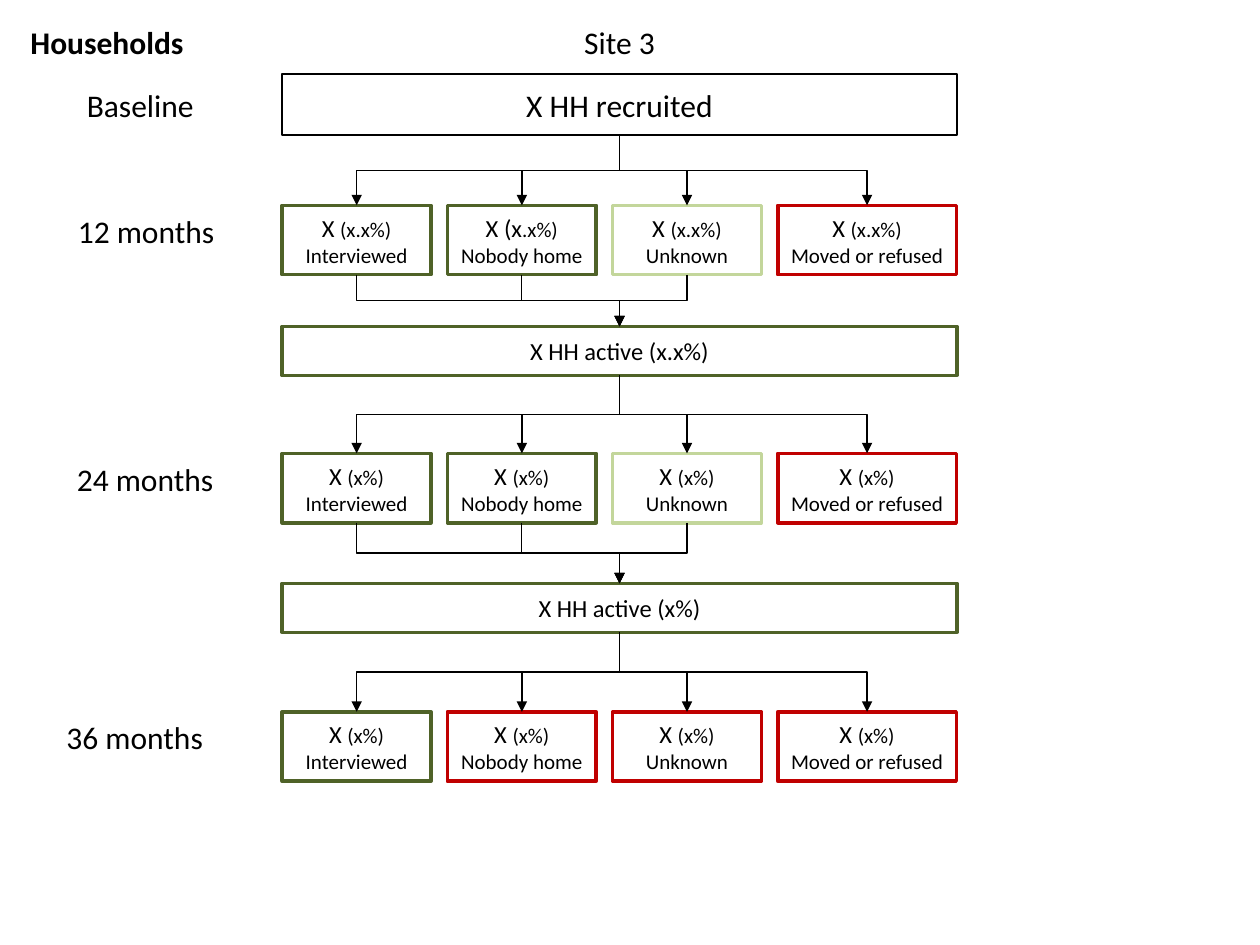
from lxml import etree
from pptx import Presentation
from pptx.dml.color import RGBColor
from pptx.enum.shapes import MSO_CONNECTOR, MSO_SHAPE
from pptx.enum.text import MSO_ANCHOR, PP_ALIGN
from pptx.oxml.ns import qn
from pptx.util import Cm, Pt

COLORS = {"black": "000000", "white": "FFFFFF", "active": "4F6228",
          "unknown": "C3D69B", "lost": "C00000"}
LEFT, FULL_WIDTH = 5.69, 13.6
CENTER = LEFT + FULL_WIDTH / 2
STATUS_STEP, STATUS_HEIGHT = 3.33, 1.4
STATUS_WIDTHS = [3, 3, 3, 3.6]
STATUSES = ["Interviewed", "Nobody home", "Unknown", "Moved or refused"]

prs = Presentation()
prs.slide_width, prs.slide_height = Cm(25.4), Cm(19.05)
slide = prs.slides.add_slide(prs.slide_layouts[5])
shapes = slide.shapes


def write(shape, lines, align=PP_ALIGN.CENTER, anchor=MSO_ANCHOR.MIDDLE, bold=False):
    frame = shape.text_frame
    frame.word_wrap = True
    frame.vertical_anchor = anchor
    frame.text = "\n".join([""] * len(lines))
    for paragraph, pieces in zip(frame.paragraphs, lines):
        paragraph.alignment = align
        for text, size in pieces:
            run = paragraph.add_run()
            run.text = text
            run.font.name, run.font.size, run.font.bold = "Calibri", Pt(size), bold
            run.font.color.rgb = RGBColor.from_string(COLORS["black"])


def add_box(left, top, width, height, color, line_width, lines):
    box = shapes.add_shape(MSO_SHAPE.RECTANGLE, Cm(left), Cm(top), Cm(width), Cm(height))
    box.shadow.inherit = False
    box.fill.solid()
    box.fill.fore_color.rgb = RGBColor.from_string(COLORS["white"])
    box.line.color.rgb = RGBColor.from_string(COLORS[color])
    box.line.width = Pt(line_width)
    box.text_frame.margin_left = box.text_frame.margin_right = 0
    write(box, lines)


households = shapes.title
households.left, households.top, households.width, households.height = (
    Cm(0.36), Cm(0.33), Cm(6.68), Cm(1.02))
write(households, [[("Households", 18)]], PP_ALIGN.LEFT, MSO_ANCHOR.TOP, True)

site = shapes.add_textbox(Cm(LEFT), Cm(0.33), Cm(FULL_WIDTH), Cm(1.02))
write(site, [[("Site 3", 18)]], anchor=MSO_ANCHOR.TOP)

for label, left, top in [("Baseline", 1.5, 1.6), ("12 months", 1.32, 4.14),
                         ("24 months", 1.3, 9.14), ("36 months", 1.09, 14.35)]:
    visit = shapes.add_textbox(Cm(left), Cm(top), Cm(3.6), Cm(1.02))
    write(visit, [[(label, 18)]], PP_ALIGN.LEFT, MSO_ANCHOR.TOP)

totals = [
    ("X HH recruited", 1.5, 1.23, "black", 1, 18),
    ("X HH active (x.x%)", 6.58, 0.99, "active", 2, 14),
    ("X HH active (x%)", 11.76, 0.99, "active", 2, 14),
]
for text, top, height, color, line_width, size in totals:
    add_box(LEFT, top, FULL_WIDTH, height, color, line_width, [[(text, size)]])

followed = ["active", "active", "unknown", "lost"]
final = ["active", "lost", "lost", "lost"]
short = [("X ", "(x%)")] * 4
decimal = [("X ", "(x.x%)"), ("X (x", ".x%)"), ("X ", "(x.x%)"), ("X ", "(x.x%)")]
visits = [(4.14, decimal, followed), (9.14, short, followed), (14.35, short, final)]

status_lefts = [LEFT + i * STATUS_STEP for i in range(4)]
status_centers = [left + width / 2 for left, width in zip(status_lefts, STATUS_WIDTHS)]
for top, counts, colors in visits:
    for left, width, (count, percent), status, color in zip(
            status_lefts, STATUS_WIDTHS, counts, STATUSES, colors):
        add_box(left, top, width, STATUS_HEIGHT, color, 2,
                [[(count, 14), (percent, 12)], [(status, 12)]])

flows = []
for total, visit in zip(totals, visits):
    total_bottom = total[1] + total[2]
    flows += [(CENTER, total_bottom, x, visit[0]) for x in status_centers]
for visit, total in zip(visits, totals[1:]):
    visit_bottom = visit[0] + STATUS_HEIGHT
    flows += [(x, visit_bottom, CENTER, total[1]) for x in status_centers[:3]]

for x1, y1, x2, y2 in flows:
    mid_x, mid_y = (x1 + x2) / 2, (y1 + y2) / 2
    drop, run_length = y2 - y1, abs(x2 - x1)
    goes_right = x2 > x1
    start, end = mid_x - drop / 2, mid_x + drop / 2
    if goes_right:
        start, end = end, start
    flow = shapes.add_connector(MSO_CONNECTOR.ELBOW, Cm(start), Cm(mid_y - run_length / 2),
                                Cm(end), Cm(mid_y + run_length / 2))
    flow.rotation = 270 if goes_right else 90
    flow.line.color.rgb = RGBColor.from_string(COLORS["black"])
    flow.line.width = Pt(0.75)
    etree.SubElement(flow.line._get_or_add_ln(), qn("a:tailEnd"), type="triangle")
    etree.SubElement(flow._element.spPr, qn("a:effectLst"))

prs.save("out.pptx")
